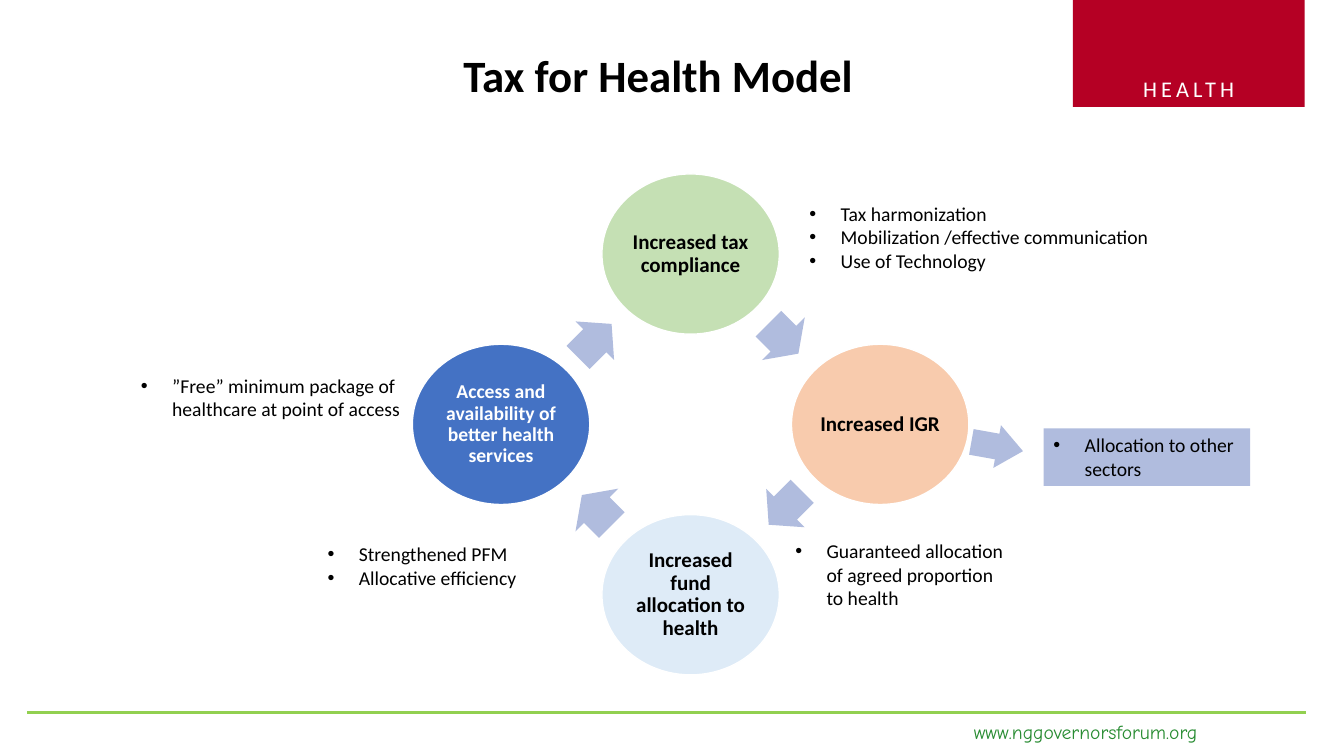
from lxml import etree
from pptx import Presentation
from pptx.dml.color import RGBColor
from pptx.enum.shapes import MSO_CONNECTOR, MSO_SHAPE
from pptx.enum.text import MSO_ANCHOR, PP_ALIGN
from pptx.oxml.ns import qn
from pptx.util import Inches, Pt

RECT, OVAL, ARROW = MSO_SHAPE.RECTANGLE, MSO_SHAPE.OVAL, MSO_SHAPE.RIGHT_ARROW
STRAIGHT = MSO_CONNECTOR.STRAIGHT
CENTER, LEFT = PP_ALIGN.CENTER, PP_ALIGN.LEFT
TOP, MIDDLE, BOTTOM = MSO_ANCHOR.TOP, MSO_ANCHOR.MIDDLE, MSO_ANCHOR.BOTTOM

COLORS = {
    "red": "B50024", "line": "92D050", "link": "288C32", "arrow": "B0BCDE",
    "green": "C5E0B4", "orange": "F8CBAD", "pale": "DEEBF7", "blue": "4472C4",
    "black": "000000", "white": "FFFFFF",
}
CYCLE_X, CYCLE_Y = 6.85, 4.21      # centre of the cycle
RADIUS_X, RADIUS_Y = 1.88, 1.69
STAGE_W, STAGE_H = 1.76, 1.59


def color(name):
    return RGBColor.from_string(COLORS[name])


def add_text(p, text, size, name="black", bold=False, font="Calibri"):
    r = p.add_run()
    r.text = text
    r.font.name, r.font.size, r.font.bold = font, Pt(size), bold
    r.font.color.rgb = color(name)
    return r


def add_filled(s, kind, x, y, w, h, fill):
    sp = s.shapes.add_shape(kind, Inches(x), Inches(y), Inches(w), Inches(h))
    sp.shadow.inherit = False
    sp.fill.solid()
    sp.fill.fore_color.rgb = color(fill)
    sp.line.fill.background()
    return sp


def add_box(s, x, y, w, h):
    sp = s.shapes.add_textbox(Inches(x), Inches(y), Inches(w), Inches(h))
    sp.text_frame.word_wrap = True
    return sp


def add_bullets(sp, items):
    tf = sp.text_frame
    tf.vertical_anchor = TOP
    for i, item in enumerate(items):
        p = tf.add_paragraph() if i else tf.paragraphs[0]
        p.alignment = LEFT
        pPr = p._p.get_or_add_pPr()
        pPr.set("marL", str(Inches(0.31)))
        pPr.set("indent", str(Inches(-0.31)))
        etree.SubElement(pPr, qn("a:buFont")).set("typeface", "Arial")
        etree.SubElement(pPr, qn("a:buChar")).set("char", "•")
        add_text(p, item, 14)


def add_stage(s, dx, dy, text, fill, size=15, name="black"):
    x = CYCLE_X + dx * RADIUS_X - STAGE_W / 2
    y = CYCLE_Y + dy * RADIUS_Y - STAGE_H / 2
    sp = add_filled(s, OVAL, x, y, STAGE_W, STAGE_H, fill)
    sp.line.color.rgb = color("white")
    sp.line.width = Pt(1)
    tf = sp.text_frame
    tf.word_wrap = True
    tf.vertical_anchor = MIDDLE
    tf.margin_left = tf.margin_right = Inches(0.01)
    tf.margin_top = tf.margin_bottom = Inches(0.02)
    p = tf.paragraphs[0]
    p.alignment, p.line_spacing, p.space_after = CENTER, 0.9, Pt(6)
    add_text(p, text, size, name, bold=True)


def add_arrow(s, cx, cy, w, h, angle):
    sp = add_filled(s, ARROW, cx - w / 2, cy - h / 2, w, h, "arrow")
    sp.adjustments[0] = 0.6
    sp.adjustments[1] = w / 2 / min(w, h)   # the head takes half the length
    sp.rotation = angle


def add_frame(s):
    sp = add_filled(s, RECT, 10.64, -0.01, 2.3, 1.07, "red")
    sp.text_frame.vertical_anchor = BOTTOM
    p = sp.text_frame.paragraphs[0]
    p.alignment = CENTER
    r = add_text(p, "HEALTH", 16, "white")
    r.font._element.set("spc", "300")

    rule = s.shapes.add_connector(STRAIGHT, Inches(0.27), Inches(7.07),
                                  Inches(12.95), Inches(7.07))
    rule.line.color.rgb = color("line")
    rule.line.width = Pt(2.25)
    etree.SubElement(rule._element.spPr, qn("a:effectLst"))

    p = add_box(s, 9.56, 7.09, 2.86, 0.34).text_frame.paragraphs[0]
    add_text(p, "www.nggovernorsforum.org", 14, "link", font="Comic Neue")

    p = add_box(s, 3.46, 0.42, 6.14, 0.64).text_frame.paragraphs[0]
    p.alignment = CENTER
    add_text(p, "Tax for Health Model", 32, bold=True)


def main():
    prs = Presentation()
    prs.slide_width, prs.slide_height = Inches(13.33), Inches(7.5)
    s = prs.slides.add_slide(prs.slide_layouts[6])
    add_frame(s)

    # Cycle of stages
    add_stage(s, 0, -1, "Increased tax compliance", "green")
    add_stage(s, 1, 0, "Increased IGR", "orange")
    add_stage(s, 0, 1, "Increased fund allocation to health", "pale")
    add_stage(s, -1, 0, "Access and availability of better health services",
              "blue", 14, "white")

    # Arrows between the stages, and one leading out
    for cx, cy, w, h, angle in [
        (7.77, 3.36, 0.42, 0.6, 45),
        (7.79, 5.04, 0.47, 0.54, 135),
        (5.92, 5.06, 0.42, 0.6, 225),
        (5.9, 3.38, 0.47, 0.54, 315),
        (9.89, 4.43, 0.52, 0.43, 10.1),
    ]:
        add_arrow(s, cx, cy, w, h, angle)

    # Notes beside the stages
    for x, y, w, h, items in [
        (7.93, 1.95, 3.58, 0.81, ["Tax harmonization",
                                  "Mobilization /effective communication",
                                  "Use of Technology"]),
        (1.3, 3.66, 2.96, 0.77,
         ["”Free” minimum package of healthcare at point of access"]),
        (7.79, 5.3, 2.37, 0.81,
         ["Guaranteed allocation of agreed proportion to health"]),
        (3.15, 5.33, 2.19, 0.81, ["Strengthened PFM", "Allocative efficiency"]),
    ]:
        add_bullets(add_box(s, x, y, w, h), items)
    sectors = add_filled(s, RECT, 10.35, 4.25, 2.05, 0.57, "arrow")
    add_bullets(sectors, ["Allocation to other sectors"])

    prs.save("out.pptx")


if __name__ == "__main__":
    main()
